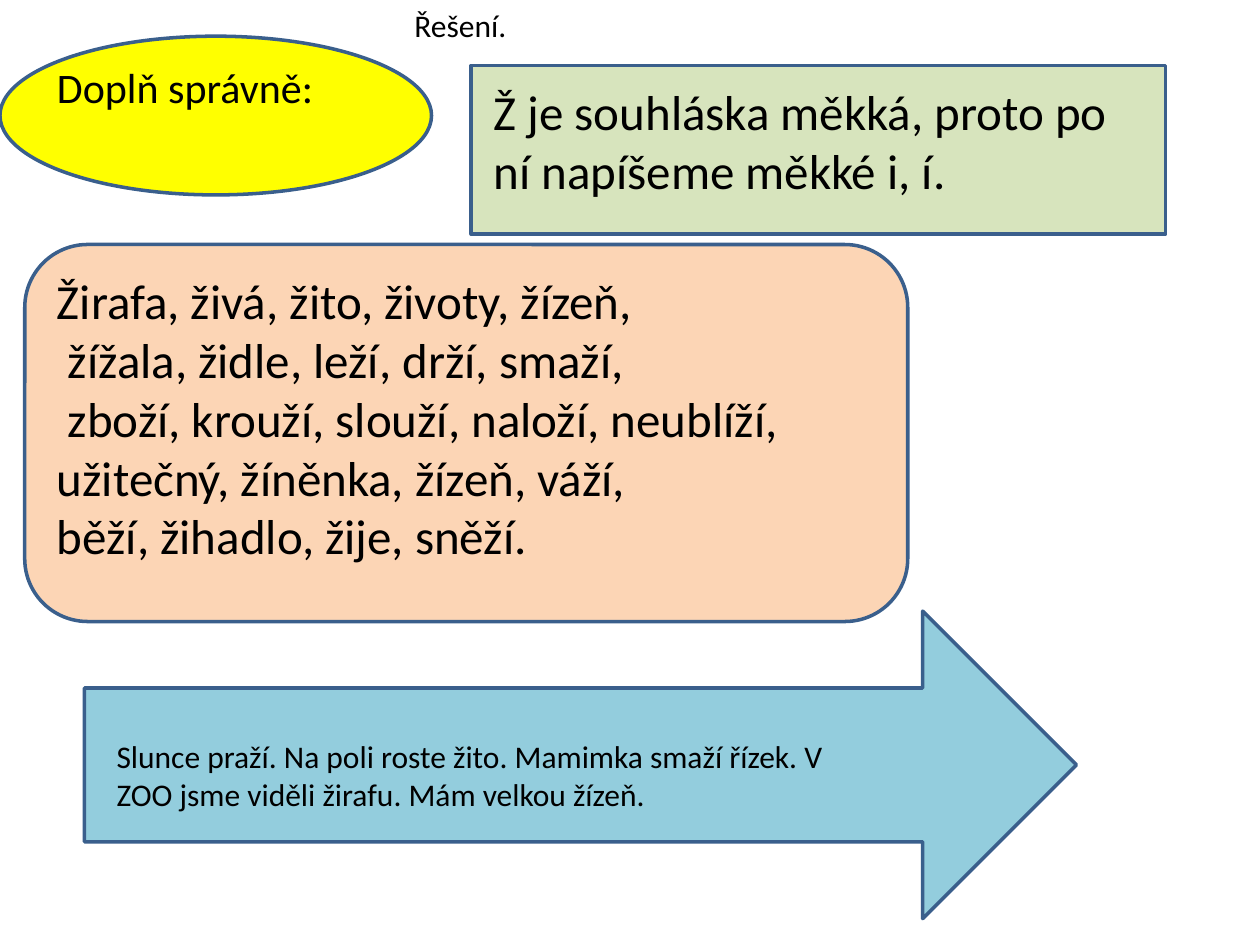
from pptx import Presentation
from pptx.dml.color import RGBColor
from pptx.enum.shapes import MSO_SHAPE
from pptx.enum.text import MSO_ANCHOR, MSO_AUTO_SIZE, PP_ALIGN
from pptx.util import Cm, Pt

BLACK = RGBColor(0x00, 0x00, 0x00)
OUTLINE = RGBColor(0x3A, 0x5F, 0x8C)
YELLOW = RGBColor(0xFF, 0xFF, 0x00)
GREEN = RGBColor(0xD7, 0xE4, 0xBD)
PEACH = RGBColor(0xFC, 0xD5, 0xB5)
BLUE = RGBColor(0x93, 0xCD, 0xDD)

WORD_LINES = [
    "Žirafa, živá, žito, životy, žízeň,",
    "žížala, židle, leží, drží, smaží,",
    "zboží, krouží, slouží, naloží, neublíží,",
    "užitečný, žíněnka, žízeň, váží,",
    "běží, žihadlo, žije, sněží.",
]
INDENTED_LINES = (1, 2)


def write(tf, *lines, size=18, font="Calibri", color=BLACK, indented=()):
    """Fill a text frame with one paragraph per line, indenting the given ones."""
    tf.word_wrap = True
    tf.auto_size = MSO_AUTO_SIZE.NONE
    tf.vertical_anchor = MSO_ANCHOR.TOP
    for i, line in enumerate(lines):
        p = tf.paragraphs[0] if i == 0 else tf.add_paragraph()
        p.alignment = PP_ALIGN.LEFT
        if i in indented:
            p._p.get_or_add_pPr().set("marL", str(Cm(0.22)))
        r = p.add_run()
        r.text = line
        r.font.name = font
        r.font.size = Pt(size)
        r.font.color.rgb = color


class Worksheet:
    """Holds the current slide and the shared outline style."""

    def __init__(self, slide, line_color=OUTLINE, line_width=2):
        self.slide = slide
        self.line_color = line_color
        self.line_width = Pt(line_width)

    def title(self, left, top, width, height, text, **style):
        sp = self.slide.shapes.title
        sp.left, sp.top, sp.width, sp.height = map(Cm, (left, top, width, height))
        write(sp.text_frame, text, **style)

    def panel(self, kind, left, top, width, height, fill):
        sp = self.slide.shapes.add_shape(kind, *map(Cm, (left, top, width, height)))
        sp.shadow.inherit = False
        sp.fill.solid()
        sp.fill.fore_color.rgb = fill
        sp.line.color.rgb = self.line_color
        sp.line.width = self.line_width

    def text(self, left, top, width, height, *lines, **style):
        sp = self.slide.shapes.add_textbox(*map(Cm, (left, top, width, height)))
        write(sp.text_frame, *lines, **style)


def main():
    prs = Presentation()
    prs.slide_width, prs.slide_height = Cm(25.4), Cm(19.05)
    s = Worksheet(prs.slides.add_slide(prs.slide_layouts[5]))

    s.title(8.1, 0, 4.8, 1.8, "Řešení.")

    s.panel(MSO_SHAPE.RECTANGLE, 9.5, 1.32, 14, 3.4, GREEN)
    s.panel(MSO_SHAPE.ROUNDED_RECTANGLE, 0.5, 4.93, 17.8, 7.6, PEACH)
    s.panel(MSO_SHAPE.OVAL, 0, 0.73, 8.7, 3.2, YELLOW)
    s.text(0.9, 1.12, 12.8, 1.28, "Doplň správně:", size=24)
    s.text(0.9, 5.33, 18.2, 6.25, *WORD_LINES, size=28, indented=INDENTED_LINES)
    s.text(9.7, 1.52, 13.4, 2.65,
           "Ž je souhláska měkká, proto po ní napíšeme měkké i, í.", size=28)

    s.panel(MSO_SHAPE.RIGHT_ARROW, 1.7, 12.32, 20, 6.2, BLUE)
    s.text(2.1, 14.73, 15, 1.8,
           "Slunce praží. Na poli roste žito. Mamimka smaží řízek. "
           "V ZOO jsme viděli žirafu. Mám velkou žízeň.")

    prs.save("out.pptx")


if __name__ == "__main__":
    main()
